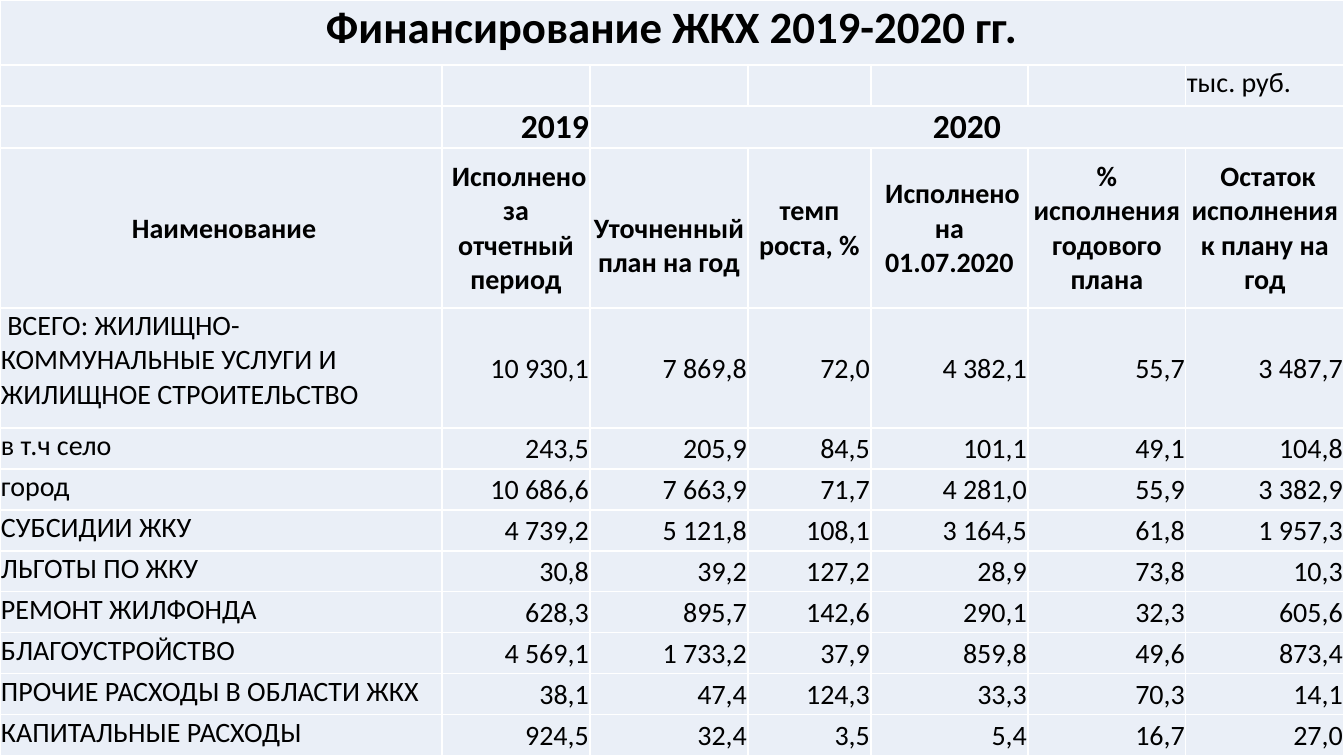
"""Build a one-slide table of housing and utilities financing for 2019-2020."""
import pptx
import pptx.dml.color
import pptx.enum.text
import pptx.oxml
import pptx.oxml.ns
import pptx.util

PX = 12192000 / 1344
PALE_BLUE = pptx.dml.color.RGBColor(0xEA, 0xEF, 0xF7)
WHITE = pptx.dml.color.RGBColor(0xFF, 0xFF, 0xFF)
BLACK = pptx.dml.color.RGBColor(0x00, 0x00, 0x00)
LEFT, CENTER, RIGHT = (
    pptx.enum.text.PP_ALIGN.LEFT,
    pptx.enum.text.PP_ALIGN.CENTER,
    pptx.enum.text.PP_ALIGN.RIGHT,
)
TOP, MIDDLE, BOTTOM = (
    pptx.enum.text.MSO_ANCHOR.TOP,
    pptx.enum.text.MSO_ANCHOR.MIDDLE,
    pptx.enum.text.MSO_ANCHOR.BOTTOM,
)

COLUMN_WIDTHS = [442, 148, 158, 123, 157, 158, 158]
ROW_HEIGHTS = [65, 41, 42, 160, 120] + [41] * 8
ROWS = [
    ["Финансирование ЖКХ 2019-2020 гг.", "", "", "", "", "", ""],
    ["", "", "", "", "", "", "тыс. руб."],
    ["", "2019", "2020", "", "", "", ""],
    [" Наименование", " Исполнено за отчетный период", " Уточненный план на год",
     "темп роста, %", " Исполнено на 01.07.2020", "% исполнения годового плана",
     " Остаток исполнения к плану на год"],
    [" ВСЕГО: ЖИЛИЩНО-КОММУНАЛЬНЫЕ УСЛУГИ И ЖИЛИЩНОЕ СТРОИТЕЛЬСТВО",
     "10 930,1", "7 869,8", "72,0", "4 382,1", "55,7", "3 487,7"],
    ["в т.ч село", "243,5", "205,9", "84,5", "101,1", "49,1", "104,8"],
    ["город", "10 686,6", "7 663,9", "71,7", "4 281,0", "55,9", "3 382,9"],
    ["СУБСИДИИ ЖКУ", "4 739,2", "5 121,8", "108,1", "3 164,5", "61,8", "1 957,3"],
    ["ЛЬГОТЫ ПО ЖКУ", "30,8", "39,2", "127,2", "28,9", "73,8", "10,3"],
    ["РЕМОНТ ЖИЛФОНДА", "628,3", "895,7", "142,6", "290,1", "32,3", "605,6"],
    ["БЛАГОУСТРОЙСТВО", "4 569,1", "1 733,2", "37,9", "859,8", "49,6", "873,4"],
    ["ПРОЧИЕ РАСХОДЫ В ОБЛАСТИ ЖКХ", "38,1", "47,4", "124,3", "33,3", "70,3", "14,1"],
    ["КАПИТАЛЬНЫЕ РАСХОДЫ", "924,5", "32,4", "3,5", "5,4", "16,7", "27,0"],
]
HEADER_STYLES = [
    (32, True, CENTER, TOP),
    (20, False, LEFT, TOP),
    (24, True, CENTER, BOTTOM),
    (20, True, CENTER, MIDDLE),
]
LABEL_STYLE = (20, False, LEFT, TOP)
VALUE_STYLE = (20, False, RIGHT, MIDDLE)


def px(length):
    return pptx.util.Emu(round(length * PX))


def add_borders(cell):
    properties = cell._tc.get_or_add_tcPr()
    for position, side in enumerate(("lnL", "lnR", "lnT", "lnB")):
        properties.insert(position, pptx.oxml.parse_xml(
            f'<a:{side} {pptx.oxml.ns.nsdecls("a")} w="12700"><a:solidFill>'
            f'<a:srgbClr val="{WHITE}"/></a:solidFill></a:{side}>'
        ))


deck = pptx.Presentation()
deck.slide_width, deck.slide_height = px(1344), px(756)
page = deck.slides.add_slide(deck.slide_layouts[6])
frame = page.shapes.add_table(len(ROWS), len(COLUMN_WIDTHS), 0, 0, px(1344), px(756))
table = frame.table
table.first_row = False
table.horz_banding = False
for column, width in zip(table.columns, COLUMN_WIDTHS):
    column.width = px(width)
for row, height in zip(table.rows, ROW_HEIGHTS):
    row.height = px(height)

for row_index, texts in enumerate(ROWS):
    for column_index, text in enumerate(texts):
        if row_index < len(HEADER_STYLES):
            style = HEADER_STYLES[row_index]
        else:
            style = VALUE_STYLE if column_index else LABEL_STYLE
        size, bold, alignment, anchor = style
        cell = table.cell(row_index, column_index)
        cell.text = text
        cell.fill.solid()
        cell.fill.fore_color.rgb = PALE_BLUE
        cell.vertical_anchor = anchor
        cell.margin_left = cell.margin_right = cell.margin_top = px(1)
        cell.margin_bottom = 0
        add_borders(cell)
        para = cell.text_frame.paragraphs[0]
        para.alignment = alignment
        para.font.name = "Calibri"
        para.font.size = pptx.util.Pt(size)
        para.font.bold = bold
        para.font.color.rgb = BLACK

table.cell(2, 1).text_frame.paragraphs[0].alignment = RIGHT
table.cell(0, 0).merge(table.cell(0, 6))
table.cell(2, 2).merge(table.cell(2, 6))

deck.save("out.pptx")
